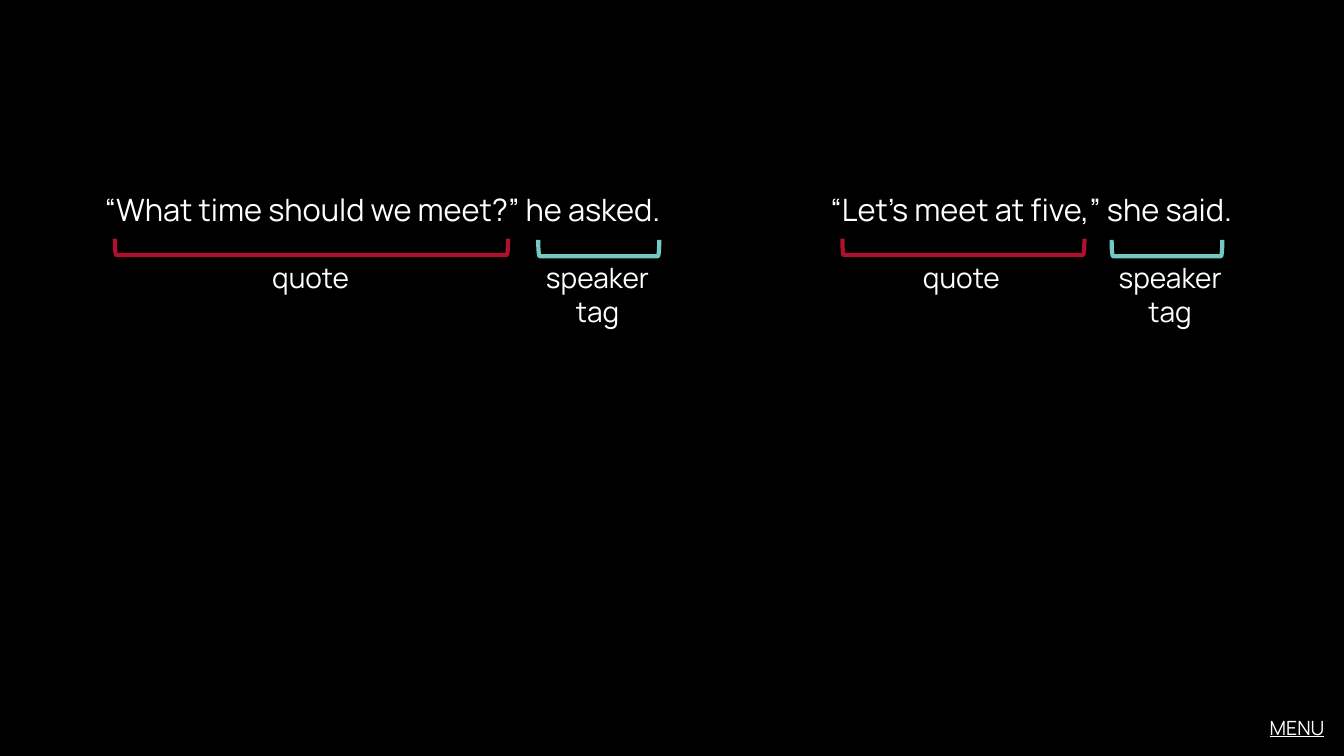
import pptx
import pptx.util
import pptx.dml.color
import pptx.enum.shapes
import pptx.enum.text

Cm = pptx.util.Cm
ALIGN = pptx.enum.text.PP_ALIGN
WHITE, RED, TEAL = "FFFFFF", "B10F2E", "73CAC5"


def paint(color_format, hex_color):
    color_format.rgb = pptx.dml.color.RGBColor.from_string(hex_color)


def add_text(text, left, top, width, height, size, align):
    tb = slide.shapes.add_textbox(Cm(left), Cm(top), Cm(width), Cm(height))
    tf = tb.text_frame
    tf.word_wrap = True
    tf.auto_size = pptx.enum.text.MSO_AUTO_SIZE.SHAPE_TO_FIT_TEXT
    p = tf.paragraphs[0]
    p.text = text
    p.alignment = align
    p.font.name = "Manrope"
    p.font.size = pptx.util.Pt(size)
    paint(p.font.color, WHITE)
    return p


prs = pptx.Presentation()
prs.slide_width, prs.slide_height = Cm(33.87), Cm(19.05)
slide = prs.slides.add_slide(prs.slide_layouts[6])
slide.background.fill.solid()
paint(slide.background.fill.fore_color, "000000")

menu = add_text("MENU", 31.29, 17.91, 2.34, 0.86, 14, ALIGN.RIGHT)
menu.font.underline = True

# sentence, left, width
sentences = [
    ("“What time should we meet?” he asked.", 2.39, 14.81),
    ("“Let’s meet at five,” she said.", 20.68, 10.62),
]
for sentence, left, width in sentences:
    add_text(sentence, left, 4.67, width, 1.19, 22, ALIGN.LEFT)

# label, label left, width and height, bracket centre x, y and span, colour
parts = [
    ("quote", 4.45, 6.76, 1.12, 7.85, 6.22, 9.91, RED),
    ("quote", 20.85, 6.76, 1.12, 24.28, 6.22, 6.1, RED),
    ("speaker\ntag", 13.18, 3.76, 1.96, 15.09, 6.25, 3.05, TEAL),
    ("speaker\ntag", 27.61, 3.76, 1.96, 29.41, 6.25, 2.79, TEAL),
]
depth = 0.41
for label, left, width, height, center_x, center_y, span, color in parts:
    # The bracket stands upright before it is turned to open upwards
    sp = slide.shapes.add_shape(
        pptx.enum.shapes.MSO_SHAPE.LEFT_BRACKET,
        Cm(center_x - depth / 2), Cm(center_y - span / 2), Cm(depth), Cm(span))
    sp.rotation = 270
    sp.shadow.inherit = False
    sp.fill.background()
    paint(sp.line.color, color)
    sp.line.width = pptx.util.Pt(3)
    add_text(label, left, 6.45, width, height, 20, ALIGN.CENTER)

prs.save("out.pptx")
